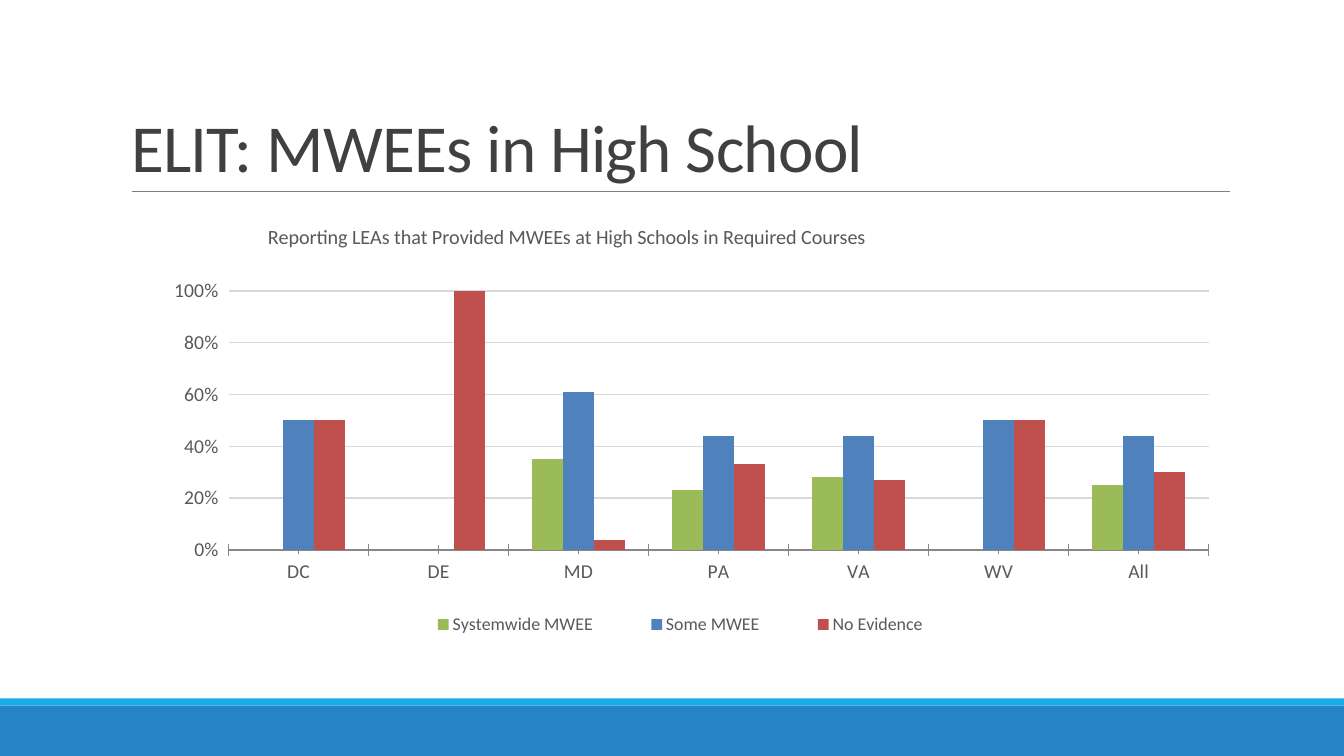
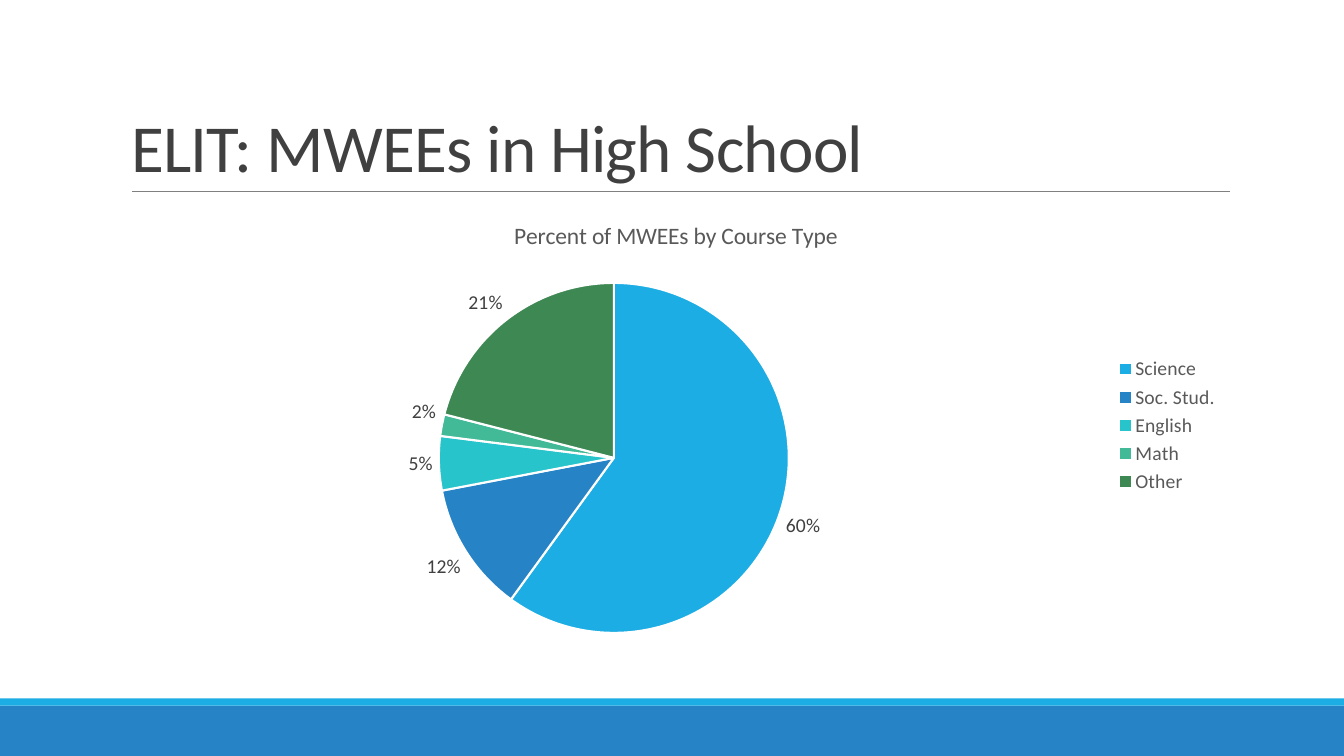
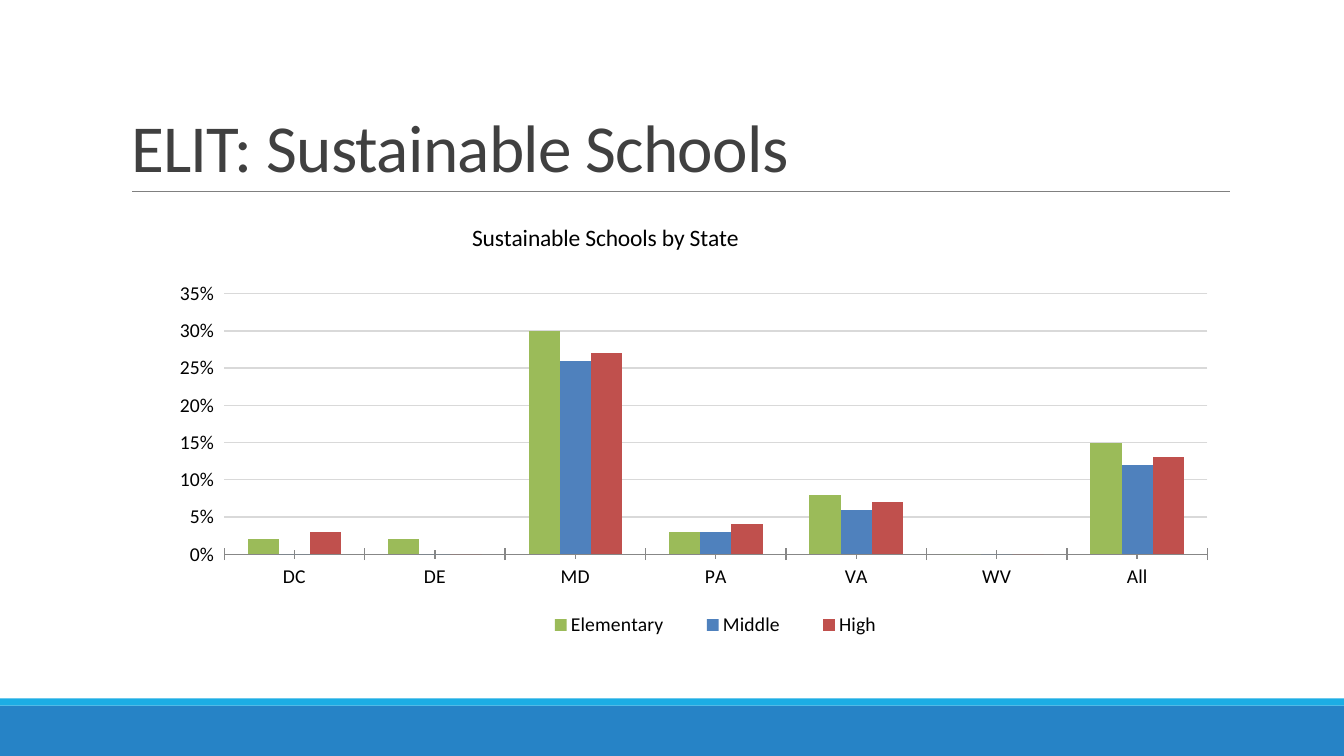
from lxml import etree
from pptx import Presentation
from pptx import util as u
from pptx.chart import data as chart_data
from pptx.dml.color import RGBColor
from pptx.enum import chart as charts, shapes, text
from pptx.oxml.ns import qn

# Colours
WHITE = RGBColor(0xFF, 0xFF, 0xFF)
BLACK = RGBColor(0x00, 0x00, 0x00)
DARK = RGBColor(0x40, 0x40, 0x40)
GREY = RGBColor(0x59, 0x59, 0x59)
RULE = RGBColor(0x80, 0x80, 0x80)
AXIS = RGBColor(0x87, 0x87, 0x87)
GRID = RGBColor(0xD9, 0xD9, 0xD9)
SKY = RGBColor(0x1C, 0xAD, 0xE4)
BLUE = RGBColor(0x26, 0x83, 0xC6)
PIE_COLOURS = (SKY, BLUE, RGBColor(0x28, 0xC4, 0xCC),
               RGBColor(0x42, 0xBA, 0x97), RGBColor(0x3E, 0x88, 0x53))
COLUMN_COLOURS = (RGBColor(0x9B, 0xBB, 0x59), RGBColor(0x4F, 0x81, 0xBD),
                  RGBColor(0xC0, 0x50, 0x4D))

FONT = "Calibri"
WIDTH, HEIGHT = u.Cm(33.87), u.Cm(19.05)
CHART_WIDTH, CHART_HEIGHT = u.Cm(27.94), u.Cm(11.18)
STATES = ("DC", "DE", "MD", "PA", "VA", "WV", "All")


def set_font(font, size, colour):
    font.name, font.size, font.bold = FONT, u.Pt(size), False
    font.color.rgb = colour


def write(frame, words, size=14, colour=BLACK, line_spacing=None, tracking=None):
    """Put one formatted run of text into a text frame."""
    paragraph = frame.paragraphs[0]
    if line_spacing:
        paragraph.line_spacing = line_spacing
    run = paragraph.add_run()
    run.text = words
    set_font(run.font, size, colour)
    if tracking is not None:
        run.font._element.set("spc", str(round(tracking * 100)))


def place(element, left, top, width=None, height=None, index=0, inner=False):
    """Give a chart part a fixed place, in centimetres within the chart."""
    layout = element.find(qn("c:layout"))
    if layout is None:
        layout = etree.Element(qn("c:layout"))
        element.insert(index, layout)
    manual = etree.SubElement(layout, qn("c:manualLayout"))
    values = {"layoutTarget": "inner" if inner else None,
              "xMode": "edge", "yMode": "edge"}
    for name, length, whole in (("x", left, CHART_WIDTH), ("y", top, CHART_HEIGHT),
                                ("w", width, CHART_WIDTH), ("h", height, CHART_HEIGHT)):
        values[name] = None if length is None else u.Cm(length) / whole
    for name, value in values.items():
        if value is not None:
            etree.SubElement(manual, qn("c:" + name)).set("val", str(value))


class Deck:
    """Holds the shared style and the current slide."""

    def __init__(self):
        self.presentation = Presentation()
        self.presentation.slide_width = WIDTH
        self.presentation.slide_height = HEIGHT
        self.slide = None

    def add_slide(self, title):
        layout = self.presentation.slide_layouts.get_by_name("Title Only")
        self.slide = self.presentation.slides.add_slide(layout)
        self.band(17.78, 1.27, BLUE)
        self.band(17.6, 0.18, SKY)
        self.rule(3.33, 31, 4.83)
        self.title(title)

    def band(self, top, height, colour):
        shape = self.slide.shapes.add_shape(
            shapes.MSO_SHAPE.RECTANGLE, 0, u.Cm(top), WIDTH, u.Cm(height))
        shape.shadow.inherit = False
        shape.fill.solid()
        shape.fill.fore_color.rgb = colour
        shape.line.fill.background()

    def rule(self, left, right, top):
        line = self.slide.shapes.add_connector(
            shapes.MSO_CONNECTOR.STRAIGHT,
            u.Cm(left), u.Cm(top), u.Cm(right), u.Cm(top))
        line.line.color.rgb = RULE
        line.line.width = u.Pt(0.5)
        etree.SubElement(line._element.spPr, qn("a:effectLst"))

    def title(self, words):
        shape = self.slide.shapes.title
        shape.left, shape.top = u.Cm(3.05), u.Cm(0.79)
        shape.width, shape.height = u.Cm(27.94), u.Cm(4.04)
        frame = shape.text_frame
        frame.auto_size = text.MSO_AUTO_SIZE.NONE
        frame.vertical_anchor = text.MSO_ANCHOR.BOTTOM
        frame.paragraphs[0].alignment = text.PP_ALIGN.LEFT
        write(frame, words, size=48, colour=DARK, line_spacing=0.85, tracking=-0.5)

    def chart(self, kind, title, categories, series, title_at, plot_at, title_size,
              colour, legend_position, legend_size=14):
        """Add a chart with its title and legend."""
        data = chart_data.CategoryChartData(number_format="0%")
        data.categories = categories
        for name, values in series.items():
            data.add_series(name, values)
        chart = self.slide.shapes.add_chart(
            kind, u.Cm(3.05), u.Cm(5.13), CHART_WIDTH, CHART_HEIGHT, data).chart
        set_font(chart.font, 14, colour)
        chart.has_title = True
        write(chart.chart_title.text_frame, title, size=title_size, colour=colour)
        place(chart.chart_title._element, *title_at, index=1)
        place(chart._chartSpace.chart.plotArea, *plot_at, inner=True)
        chart.has_legend = True
        chart.legend.position = legend_position
        chart.legend.include_in_layout = False
        set_font(chart.legend.font, legend_size, colour)
        return chart

    def column_chart(self, title, series, legend_at, maximum, step, **style):
        chart = self.chart(charts.XL_CHART_TYPE.COLUMN_CLUSTERED, title, STATES,
                           series, legend_position=charts.XL_LEGEND_POSITION.BOTTOM,
                           **style)
        place(chart.legend._element, *legend_at, index=1)

        # Columns
        plot = chart.plots[0]
        plot.gap_width, plot.overlap, plot.vary_by_categories = 150, 0, False
        for column, colour in zip(plot.series, COLUMN_COLOURS):
            column.format.fill.solid()
            column.format.fill.fore_color.rgb = colour

        # Axes
        for axis in (chart.category_axis, chart.value_axis):
            axis.major_tick_mark = axis.minor_tick_mark = charts.XL_TICK_MARK.CROSS
            set_font(axis.tick_labels.font, 14, style["colour"])
        chart.category_axis.format.line.color.rgb = AXIS
        chart.category_axis.format.line.width = u.Pt(1)
        value_axis = chart.value_axis
        value_axis.minimum_scale, value_axis.maximum_scale = 0, maximum
        value_axis.major_unit = step
        value_axis.tick_labels.number_format = "0%"
        value_axis.tick_labels.number_format_is_linked = False
        value_axis.format.line.fill.background()
        grid_line = value_axis.major_gridlines.format.line
        grid_line.color.rgb, grid_line.width = GRID, u.Pt(1)

    def pie_chart(self, title, shares, **style):
        chart = self.chart(charts.XL_CHART_TYPE.PIE, title, list(shares),
                           {"Series 1": list(shares.values())},
                           legend_position=charts.XL_LEGEND_POSITION.RIGHT, **style)
        plot = chart.plots[0]
        for index, colour in enumerate(PIE_COLOURS):
            slice_format = plot.series[0].points[index].format
            slice_format.fill.solid()
            slice_format.fill.fore_color.rgb = colour
            slice_format.line.color.rgb = WHITE
            slice_format.line.width = u.Pt(1.5)
        plot.has_data_labels = True
        labels = plot.data_labels
        labels.show_value, labels.show_percentage = True, False
        labels.number_format, labels.number_format_is_linked = "0%", False
        labels.position = charts.XL_LABEL_POSITION.OUTSIDE_END
        set_font(labels.font, 14, DARK)


def main():
    deck = Deck()

    # High school experiences by state
    deck.add_slide("ELIT: MWEEs in High School")
    deck.column_chart(
        "Reporting LEAs that Provided MWEEs at High Schools in Required Courses",
        {"Systemwide MWEE": (0, 0, 0.35, 0.23, 0.28, 0, 0.25),
         "Some MWEE": (0.5, 0, 0.61, 0.44, 0.44, 0.5, 0.44),
         "No Evidence": (0.5, 1, 0.04, 0.33, 0.27, 0.5, 0.3)},
        title_at=(3.61, 0.39), plot_at=(2.71, 2.2, 24.7, 6.53),
        legend_at=(6.66, 10.11, 14.87, 1), maximum=1, step=0.2,
        title_size=14.4, legend_size=12.8, colour=GREY)

    # High school experiences by course
    deck.add_slide("ELIT: MWEEs in High School")
    deck.pie_chart(
        "Percent of MWEEs by Course Type",
        {"Science": 0.6, "Soc. Stud.": 0.12, "English": 0.05,
         "Math": 0.02, "Other": 0.21},
        title_at=(9.8, 0.29), plot_at=(8.01, 2, 8.82, 8.82),
        title_size=16.8, colour=GREY)

    # Sustainable schools by state
    deck.add_slide("ELIT: Sustainable Schools")
    deck.column_chart(
        "Sustainable Schools by State",
        {"Elementary": (0.02, 0.02, 0.3, 0.03, 0.08, 0, 0.15),
         "Middle": (0, 0, 0.26, 0.03, 0.06, 0, 0.12),
         "High": (0.03, 0, 0.27, 0.04, 0.07, 0, 0.13)},
        title_at=(8.74, 0.34), plot_at=(2.6, 2.27, 24.78, 6.57),
        legend_at=(10.01, 10.12, 9.94, 1), maximum=0.35, step=0.05,
        title_size=16.8, colour=BLACK)

    deck.presentation.save("out.pptx")


if __name__ == "__main__":
    main()
